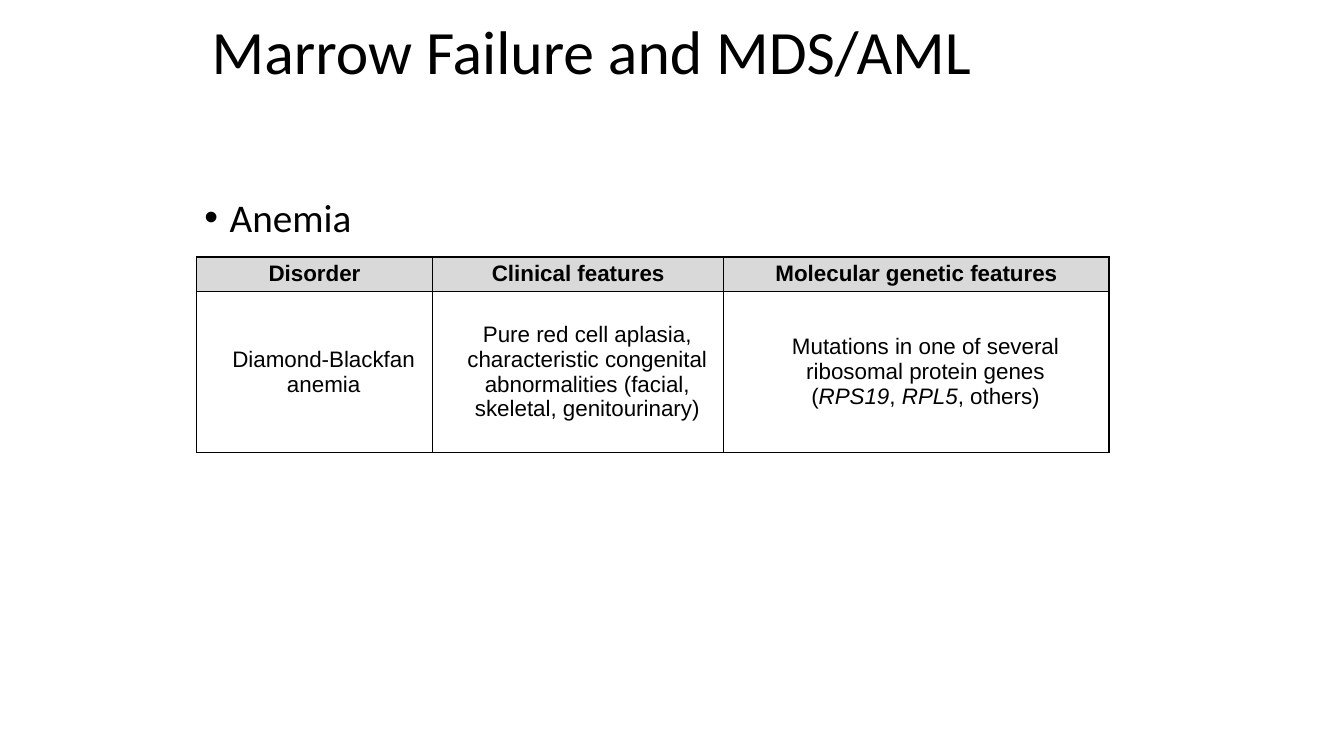
from dataclasses import dataclass

from pptx import Presentation
from pptx.dml.color import RGBColor
from pptx.enum import text
from pptx.oxml import parse_xml
from pptx.oxml.ns import nsdecls
from pptx.util import Inches, Pt


@dataclass(frozen=True)
class Theme:
    ink: str = "000000"
    header_fill: str = "D9D9D9"
    title_font: str = "Calibri"
    table_font: str = "Arial"
    title_size: int = 44
    body_size: int = 28
    table_size: int = 16


@dataclass(frozen=True)
class Run:
    text: str
    italic: bool = False


@dataclass(frozen=True)
class Column:
    width: float
    heading: str
    paragraphs: tuple[tuple[Run, ...], ...]


THEME = Theme()
ROW_HEIGHTS = (0.34, 1.6)
CELL_INDENT = 0.18
COLUMNS = (
    Column(2.34, "Disorder", ((Run("Diamond-Blackfan anemia"),),)),
    Column(2.89, "Clinical features", (
        (Run("Pure red cell aplasia, characteristic congenital "
             "abnormalities (facial, skeletal, genitourinary)"),),
    )),
    Column(3.82, "Molecular genetic features", (
        (Run("Mutations in one of several ribosomal protein genes"),),
        (Run("("), Run("RPS19", True), Run(", "), Run("RPL5", True), Run(", others)")),
    )),
)


def add_run(p, run: Run, font: str, size: int, bold: bool = False) -> None:
    r = p.add_run()
    r.text = run.text
    formats = {"name": font, "size": Pt(size), "bold": bold, "italic": run.italic}
    for name, value in formats.items():
        setattr(r.font, name, value)
    r.font.color.rgb = RGBColor.from_string(THEME.ink)


def set_indent(p, left: float, first: float = 0) -> None:
    pPr = p._p.get_or_add_pPr()
    pPr.set("marL", str(Inches(left)))
    pPr.set("indent", str(Inches(first)))


def add_borders(cell) -> None:
    tcPr = cell._tc.get_or_add_tcPr()
    for i, side in enumerate(("lnL", "lnR", "lnT", "lnB")):
        tcPr.insert(i, parse_xml(
            f'<a:{side} {nsdecls("a")} w="{Pt(1)}"><a:solidFill>'
            f'<a:srgbClr val="{THEME.ink}"/></a:solidFill></a:{side}>'))


def fill_cell(cell, paragraphs: tuple[tuple[Run, ...], ...], header: bool) -> None:
    for side in ("left", "right", "top", "bottom"):
        setattr(cell, f"margin_{side}", 0)
    cell.vertical_anchor = text.MSO_ANCHOR.MIDDLE
    if header:
        cell.fill.solid()
        cell.fill.fore_color.rgb = RGBColor.from_string(THEME.header_fill)
    else:
        cell.fill.background()
    add_borders(cell)
    tf = cell.text_frame
    for i, runs in enumerate(paragraphs):
        p = tf.add_paragraph() if i else tf.paragraphs[0]
        p.alignment = text.PP_ALIGN.CENTER
        if not header:
            set_indent(p, CELL_INDENT)
        for run in runs:
            add_run(p, run, THEME.table_font, THEME.table_size, header)


def format_text(sp, content: str, size: int):
    tf = sp.text_frame
    formats = {"word_wrap": True, "auto_size": text.MSO_AUTO_SIZE.NONE,
               "vertical_anchor": text.MSO_ANCHOR.TOP}
    for name, value in formats.items():
        setattr(tf, name, value)
    p = tf.paragraphs[0]
    p.alignment = text.PP_ALIGN.LEFT
    p.line_spacing = 0.9
    add_run(p, Run(content), THEME.title_font, size)
    return p


def main() -> None:
    prs = Presentation()
    prs.slide_width, prs.slide_height = Inches(13.33), Inches(7.5)
    s = prs.slides.add_slide(prs.slide_layouts[5])

    # Title
    title = s.shapes.title
    box = {"left": 2, "top": 0.16, "width": 9.31, "height": 0.88}
    for name, value in box.items():
        setattr(title, name, Inches(value))
    format_text(title, "Marrow Failure and MDS/AML", THEME.title_size)

    # Disorder table
    width = sum(c.width for c in COLUMNS)
    table = s.shapes.add_table(
        len(ROW_HEIGHTS), len(COLUMNS), Inches(1.95), Inches(2.55),
        Inches(width), Inches(sum(ROW_HEIGHTS))).table
    table.horz_banding = False
    for row, height in zip(table.rows, ROW_HEIGHTS):
        row.height = Inches(height)
    for i, column in enumerate(COLUMNS):
        table.columns[i].width = Inches(column.width)
        fill_cell(table.cell(0, i), ((Run(column.heading),),), True)
        fill_cell(table.cell(1, i), column.paragraphs, False)

    # Bullet
    body = s.shapes.add_textbox(Inches(1.93), Inches(1.92), Inches(9.33), Inches(4.05))
    p = format_text(body, "Anemia", THEME.body_size)
    set_indent(p, 0.25, -0.25)
    pPr = p._p.get_or_add_pPr()
    pPr.append(parse_xml(f'<a:buFont {nsdecls("a")} typeface="Arial"/>'))
    pPr.append(parse_xml(f'<a:buChar {nsdecls("a")} char="•"/>'))

    prs.save("out.pptx")


if __name__ == "__main__":
    main()
